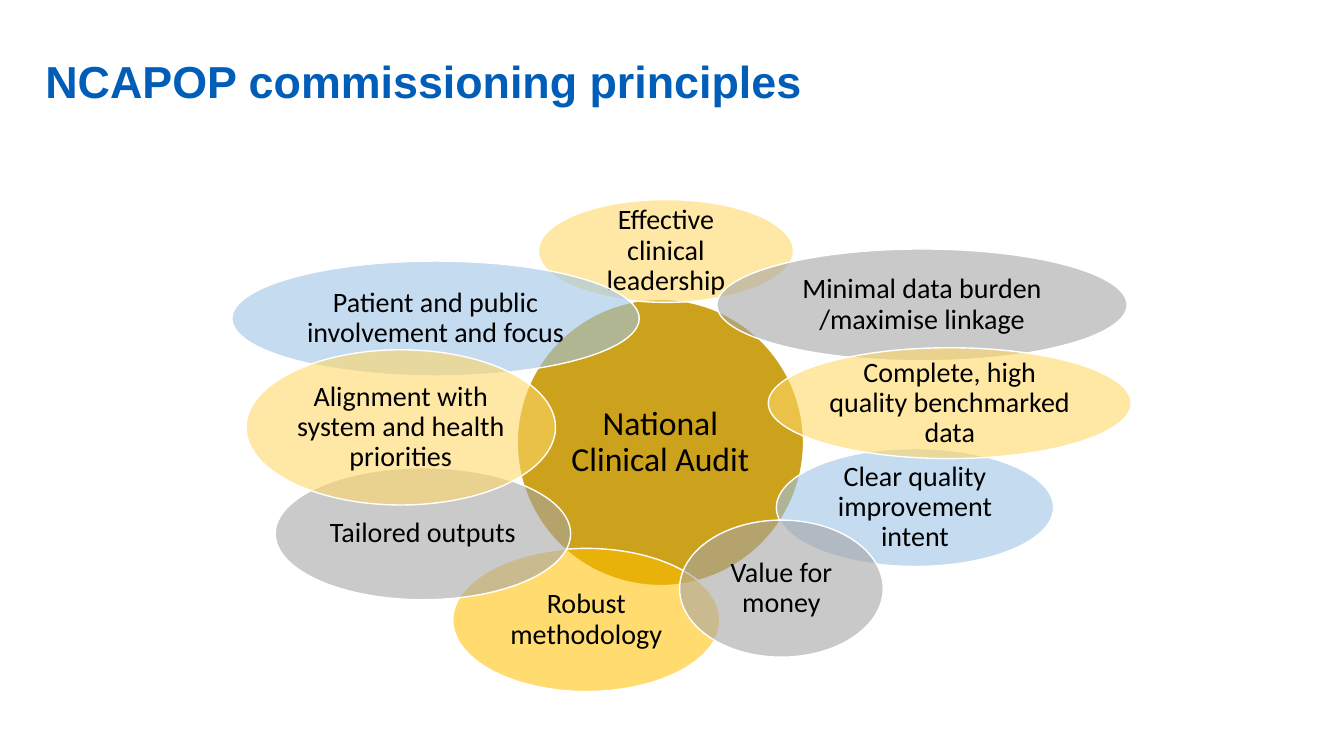
from dataclasses import dataclass

from pptx import Presentation
from pptx.dml.color import RGBColor
from pptx.enum import shapes, text
from pptx.oxml import xmlchemy as xml
from pptx.oxml.ns import qn
from pptx.util import Inches, Pt


@dataclass(frozen=True)
class Theme:
    title: str = "005EB8"
    ink: str = "000000"
    edge: str = "FFFFFF"
    core: str = "CCA11B"
    amber: str = "FFC000"
    sand: str = "FFD966"
    grey: str = "A5A5A5"
    sky: str = "9DC3E6"
    head: str = "Arial"
    body: str = "Calibri"
    title_size: int = 32
    core_size: int = 24
    petal_size: int = 20


@dataclass(frozen=True)
class Oval:
    label: str
    left: float
    top: float
    width: float
    height: float
    fill: str
    alpha: int = 60
    size: int = Theme.petal_size


THEME = Theme()

# Listed from back to front: the ovals overlap.
OVALS = [
    Oval("National Clinical Audit", 5.13, 2.97, 2.84, 2.84, THEME.core, 100, THEME.core_size),
    Oval("Effective clinical leadership", 5.34, 1.98, 2.53, 1.02, THEME.sand, 59),
    Oval("Minimal data burden /maximise linkage", 7.11, 2.47, 4.07, 1.11, THEME.grey),
    Oval("Patient and public involvement and focus", 2.3, 2.59, 4.04, 1.14, THEME.sky, 59),
    Oval("Clear quality improvement intent", 7.7, 4.45, 2.75, 1.17, THEME.sky),
    Oval("Robust methodology", 4.49, 5.44, 2.65, 1.42, THEME.amber, 56),
    Oval("Value for money", 6.74, 5.16, 2.02, 1.36, THEME.grey),
    Oval("Tailored outputs", 2.73, 4.64, 2.93, 1.31, THEME.grey, 59),
    Oval("Alignment with system and health priorities", 2.44, 3.47, 3.07, 1.54, THEME.sand, 59),
    Oval("Complete, high quality benchmarked data", 7.62, 3.45, 3.6, 1.1, THEME.sand),
]


def write(frame, words: str, font: str, size: int, color: str, align, bold: bool = False) -> None:
    frame.word_wrap = True
    frame.auto_size = text.MSO_AUTO_SIZE.NONE
    frame.vertical_anchor = text.MSO_ANCHOR.MIDDLE
    para = frame.paragraphs[0]
    para.alignment = align
    para.line_spacing = 0.9
    run = para.add_run()
    run.text = words
    run.font.name = font
    run.font.size = Pt(size)
    run.font.bold = bold
    run.font.color.rgb = RGBColor.from_string(color)


def fade(shape, alpha: int) -> None:
    """Set the opacity of a solid fill, in percent."""
    color = shape._element.spPr.find(qn("a:solidFill"))[0]
    mark = xml.OxmlElement("a:alpha")
    mark.set("val", str(alpha * 1000))
    color.append(mark)


def draw_oval(slide, oval: Oval) -> None:
    box = map(Inches, (oval.left, oval.top, oval.width, oval.height))
    shape = slide.shapes.add_shape(shapes.MSO_SHAPE.OVAL, *box)
    shape.shadow.inherit = False
    shape.fill.solid()
    shape.fill.fore_color.rgb = RGBColor.from_string(oval.fill)
    if oval.alpha < 100:
        fade(shape, oval.alpha)
    shape.line.color.rgb = RGBColor.from_string(THEME.edge)
    shape.line.width = Pt(1)
    frame = shape.text_frame
    frame.margin_left = frame.margin_right = Inches(0.03)
    frame.margin_top = frame.margin_bottom = Inches(0.03)
    write(frame, oval.label, THEME.body, oval.size, THEME.ink, text.PP_ALIGN.CENTER)


def draw_title(slide, words: str) -> None:
    title = slide.shapes.title
    title.left, title.top = Inches(0.35), Inches(0.41)
    title.width, title.height = Inches(11.5), Inches(0.85)
    write(title.text_frame, words, THEME.head, THEME.title_size, THEME.title,
          text.PP_ALIGN.LEFT, bold=True)


def main() -> None:
    deck = Presentation()
    deck.slide_width, deck.slide_height = Inches(13.33), Inches(7.5)
    slide = deck.slides.add_slide(deck.slide_layouts.get_by_name("Title Only"))
    draw_title(slide, "NCAPOP commissioning principles")
    for oval in OVALS:
        draw_oval(slide, oval)
    deck.save("out.pptx")


if __name__ == "__main__":
    main()
